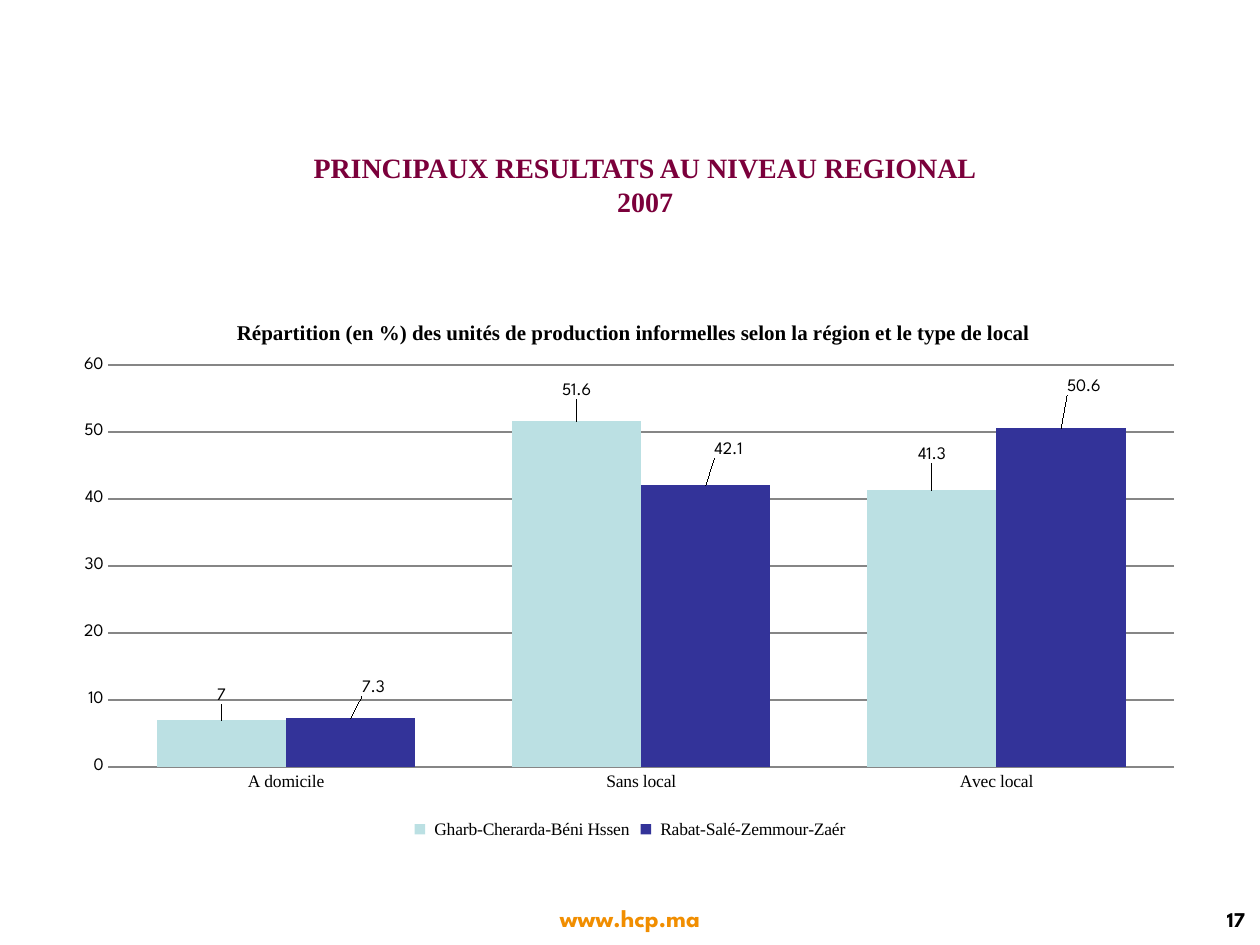
from lxml import etree
from pptx import Presentation
from pptx import util as u
from pptx.chart.data import CategoryChartData
from pptx.dml.color import RGBColor
from pptx.enum import chart as ch, text
from pptx.oxml.ns import qn

SERIF, SANS = "Times New Roman", "League Spartan"
REGIONS = [
    # name, values, colour, label offsets as fractions of the chart
    (" Gharb-Cherarda-Béni Hssen", (7, 51.6, 41.3), "BBE0E3",
     ((0, -0.02), (0, -0.03), (0, -0.04))),
    (" Rabat-Salé-Zemmour-Zaér", (7.3, 42.1, 50.6), "333399",
     ((0.02, -0.03), (0.02, -0.04), (0.02, -0.05))),
]


def colour(value):
    return RGBColor.from_string(value)


def style_font(font, size, name, hex_colour="000000", bold=False):
    for key, value in dict(size=u.Pt(size), name=name, bold=bold).items():
        setattr(font, key, value)
    font.color.rgb = colour(hex_colour)


def fill_text(shape, words, align, *font_format):
    frame = shape.text_frame
    settings = dict(text=words, word_wrap=True, auto_size=text.MSO_AUTO_SIZE.NONE,
                    vertical_anchor=text.MSO_ANCHOR.MIDDLE)
    for key, value in settings.items():
        setattr(frame, key, value)
    for paragraph in frame.paragraphs:
        paragraph.alignment = align
        style_font(paragraph.font, *font_format)


def add_label(slide, place, *content):
    box = slide.shapes.add_textbox(*map(u.Inches, place))
    fill_text(box, *content)


def set_layout(parent, after, **values):
    """Place a chart part by hand, after the named child (None: first)."""
    for old in parent.findall(qn("c:layout")):
        parent.remove(old)
    layout = etree.Element(qn("c:layout"))
    manual = etree.SubElement(layout, qn("c:manualLayout"))
    for tag, value in values.items():
        etree.SubElement(manual, qn("c:" + tag)).set("val", str(value))
    if after:
        parent.find(qn(after)).addnext(layout)
    else:
        parent.insert(0, layout)


def style_axes(chart):
    category, value = chart.category_axis, chart.value_axis
    for axis, font in ((category, SERIF), (value, SANS)):
        axis.major_tick_mark = axis.minor_tick_mark = ch.XL_TICK_MARK.NONE
        style_font(axis.tick_labels.font, 10, font)
    value.minimum_scale, value.maximum_scale, value.major_unit = 0, 60, 10
    value.format.line.fill.background()
    for line in (category.format.line, value.major_gridlines.format.line):
        line.color.rgb = colour("868686")
        line.width = u.Pt(0.75)


def style_series(series, hex_colour, offsets):
    series.format.fill.solid()
    series.format.fill.fore_color.rgb = colour(hex_colour)
    series.invert_if_negative = False
    labels = series.data_labels
    labels.show_value = True
    style_font(labels.font, 10, SANS)
    for index in range(len(offsets)):
        label = series.points[index].data_label
        style_font(label.font, 10, SANS)
        label.position = ch.XL_LABEL_POSITION.OUTSIDE_END
    for element, (x, y) in zip(series._element.iter(qn("c:dLbl")), offsets):
        set_layout(element, "c:idx", x=x, y=y)


def add_region_chart(slide):
    data = CategoryChartData()
    data.categories = ["A domicile", "Sans local", "Avec local"]
    for name, values, *_ in REGIONS:
        data.add_series(name, values)
    place = map(u.Inches, (0.5, 2.33, 9, 4.37))
    chart = slide.shapes.add_chart(
        ch.XL_CHART_TYPE.COLUMN_CLUSTERED, *place, data).chart
    style_font(chart.font, 10, SANS)

    # Heading of the chart
    heading = chart.chart_title.text_frame
    heading.text = ("Répartition (en %) des unités de production informelles "
                    "selon la région et le type de local")
    style_font(heading.paragraphs[0].runs[0].font, 12, SERIF, "000000", True)
    set_layout(chart.chart_title._element, "c:tx",
               xMode="edge", yMode="edge", x=0.15, y=0.04)
    chart.chart_title.include_in_layout = False

    # Columns and axes
    plot = chart.plots[0]
    plot.gap_width, plot.overlap, plot.vary_by_categories = 75, 0, False
    for series, (_, _, hex_colour, offsets) in zip(plot.series, REGIONS):
        style_series(series, hex_colour, offsets)
    style_axes(chart)
    set_layout(chart._chartSpace.chart.plotArea, None, layoutTarget="inner",
               xMode="edge", yMode="edge", x=0.04, y=0.13, w=0.94, h=0.73)

    # Legend
    chart.has_legend = True
    chart.legend.position = ch.XL_LEGEND_POSITION.BOTTOM
    chart.legend.include_in_layout = False
    style_font(chart.legend.font, 10, SERIF)


def main():
    deck = Presentation()
    deck.slide_width, deck.slide_height = u.Inches(10), u.Inches(7.5)
    slide = deck.slides.add_slide(deck.slide_layouts[5])

    # Title
    title = slide.shapes.title
    frame = dict(left=1.3, top=0.84, width=7.64, height=1.25)
    for key, value in frame.items():
        setattr(title, key, u.Inches(value))
    fill_text(title, "PRINCIPAUX RESULTATS AU NIVEAU REGIONAL\v2007",
              text.PP_ALIGN.CENTER, 16, SERIF, "7B003B", True)

    add_region_chart(slide)

    # Footer
    add_label(slide, (3.82, 7.12, 2.36, 0.33), "www.hcp.ma",
              text.PP_ALIGN.CENTER, 14, SANS, "F18E00", True)
    add_label(slide, (8.46, 7.12, 1.52, 0.35), "17",
              text.PP_ALIGN.RIGHT, 12, SANS, "000000", True)
    deck.save("out.pptx")


if __name__ == "__main__":
    main()
